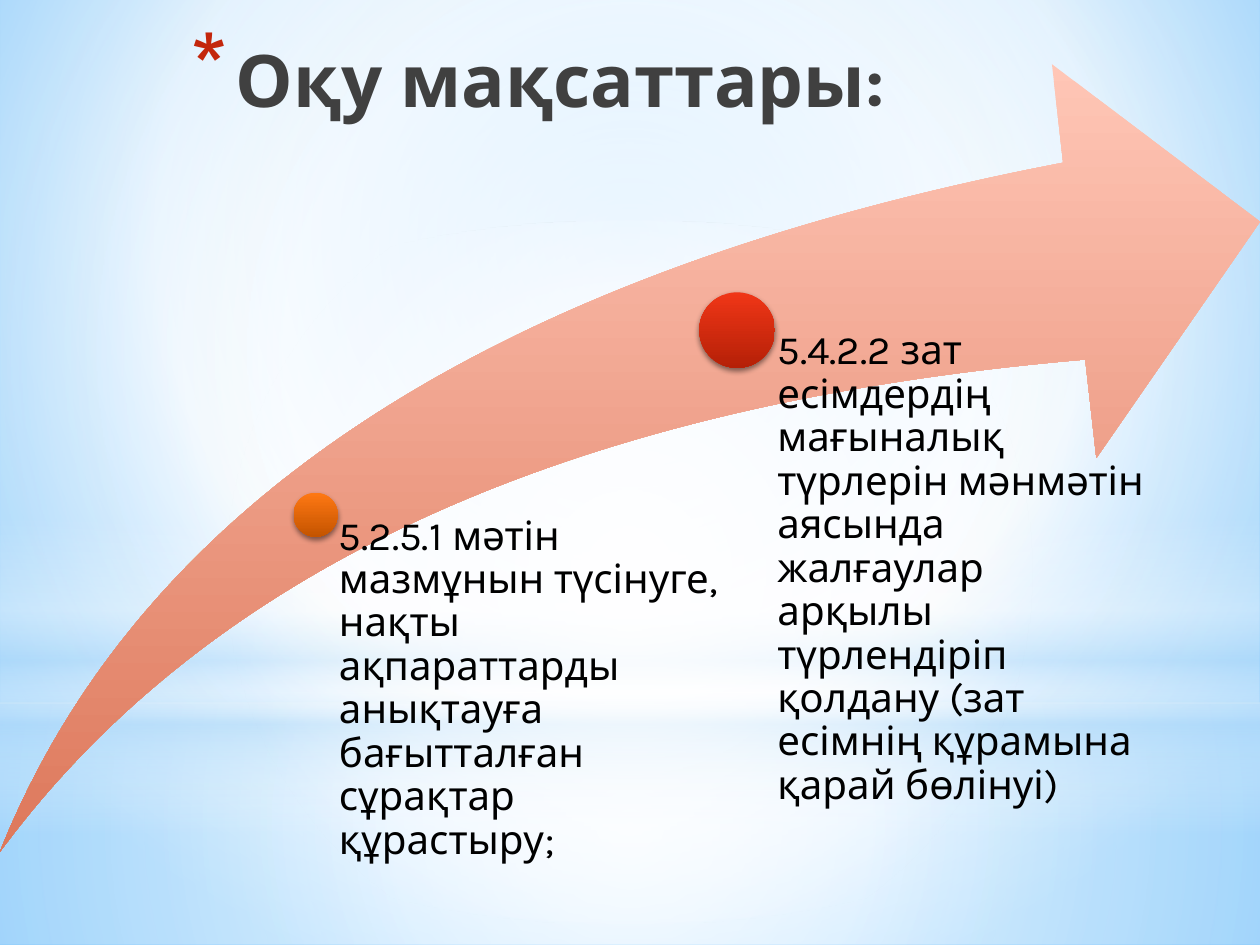
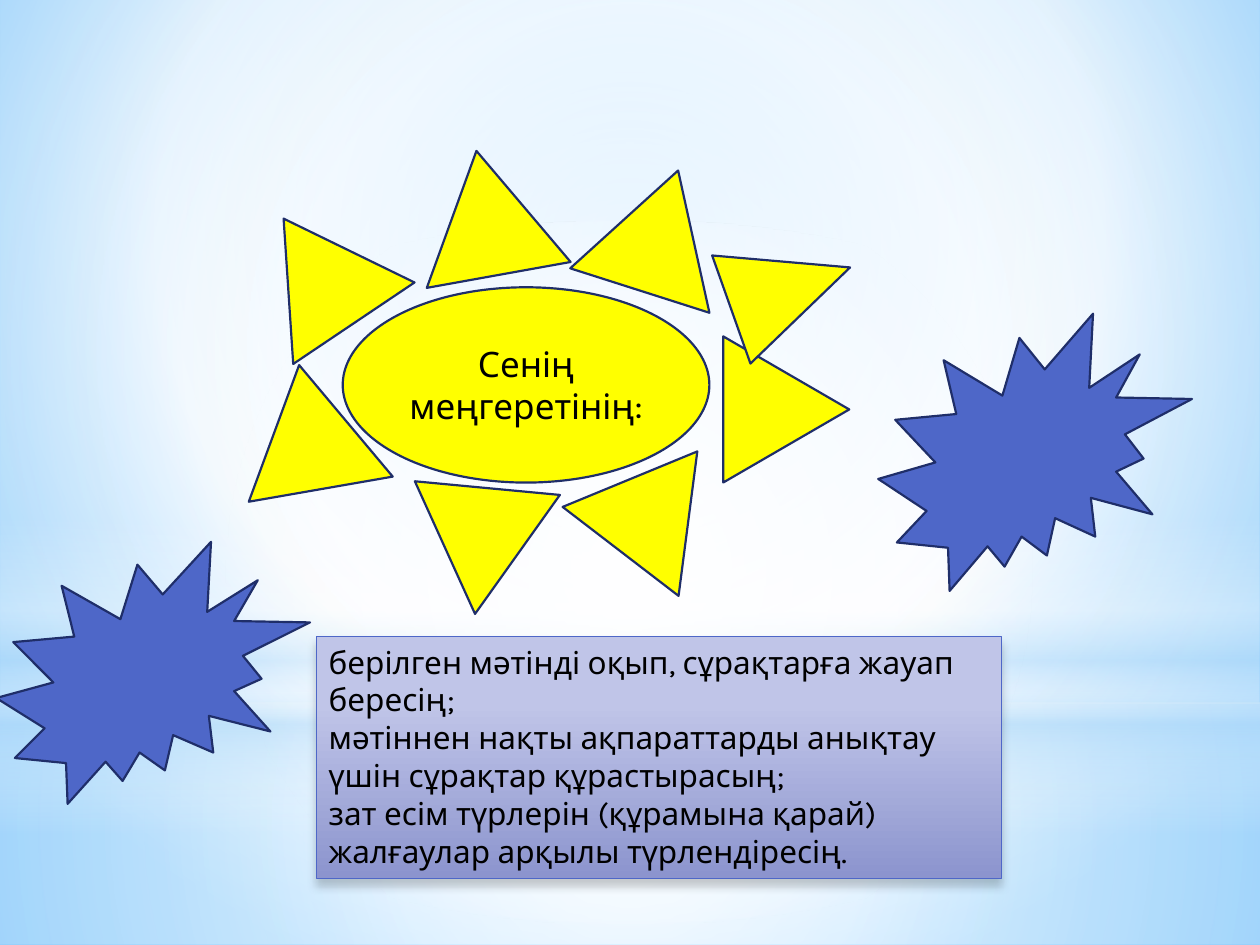
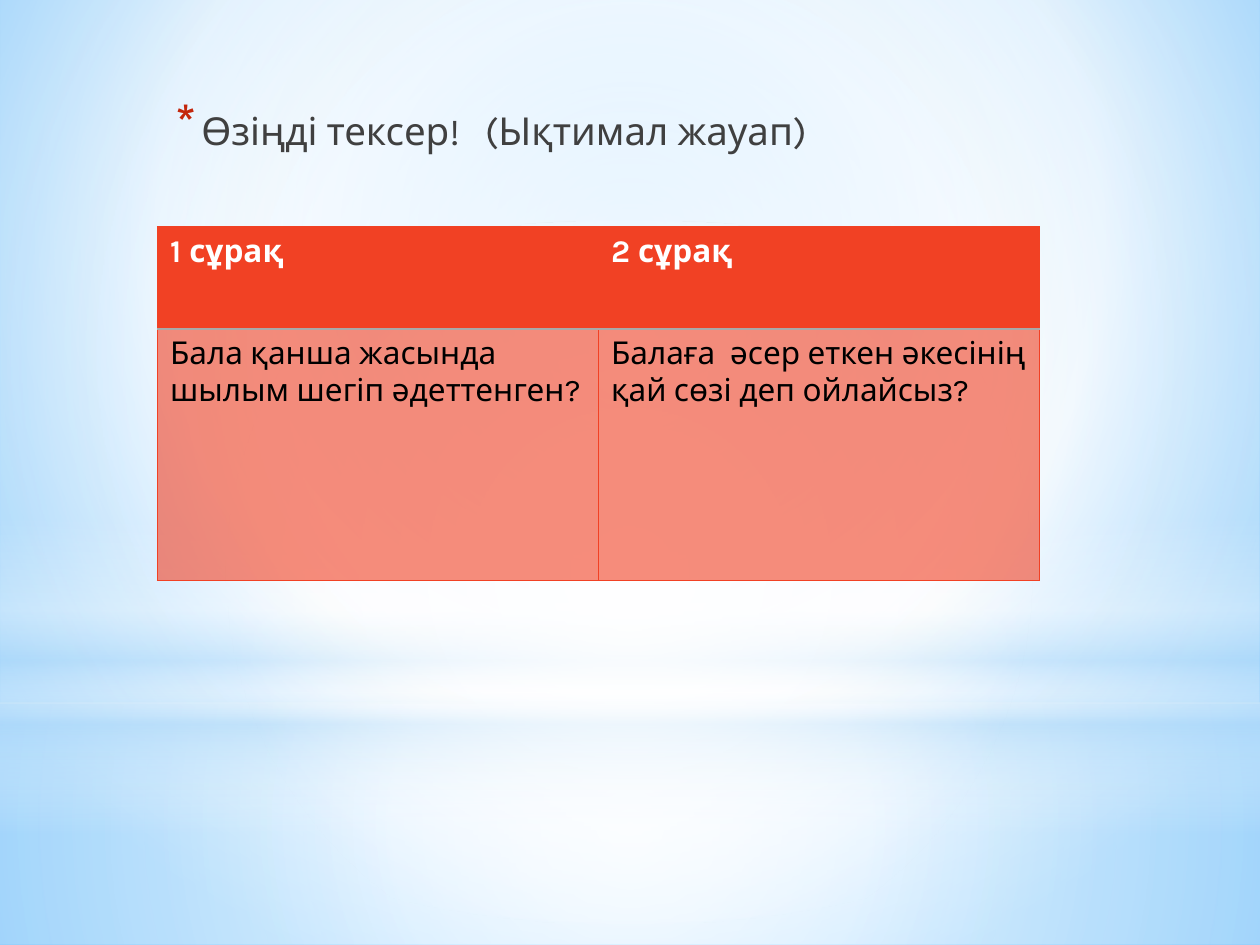
import pptx
import pptx.dml.color
import pptx.enum.shapes
import pptx.enum.text
import pptx.oxml
import pptx.oxml.ns
import pptx.util

Inches = pptx.util.Inches
Pt = pptx.util.Pt
color = pptx.dml.color.RGBColor.from_string
SHAPE = pptx.enum.shapes.MSO_SHAPE
ALIGN = pptx.enum.text.PP_ALIGN
ANCHOR = pptx.enum.text.MSO_ANCHOR
NAMESPACE = pptx.oxml.ns.nsdecls("a")

# Shared colours and font
FONT = "Karla"
BLACK, WHITE, TITLE_GREY = "000000", "FFFFFF", "404040"
BULLET_RED, TABLE_RED, RULE_GREY = "C3260C", "F14124", "A9A9A9"
YELLOW, BLUE, NAVY, SKY = "FFFF00", "4E67C8", "1F2E69", "B4DCFA"
CENTRE = (50, 50, 50, 50)


def paint_gradient(fill, parent, stops, focus=None):
    """Fill with (position, colour, opacity) stops, downward or around a focus."""
    stop_xml = "".join(
        f'<a:gs pos="{position * 1000}"><a:srgbClr val="{value}">'
        f'<a:alpha val="{opacity * 1000}"/></a:srgbClr></a:gs>'
        for position, value, opacity in stops)
    if focus:
        left, top, right, bottom = (edge * 1000 for edge in focus)
        direction = (f'<a:path path="circle"><a:fillToRect l="{left}" t="{top}" '
                     f'r="{right}" b="{bottom}"/></a:path>')
    else:
        direction = '<a:lin ang="5400000" scaled="0"/>'
    fill.background()
    parent.replace(parent.find(pptx.oxml.ns.qn("a:noFill")), pptx.oxml.parse_xml(
        f'<a:gradFill {NAMESPACE} rotWithShape="1"><a:gsLst>{stop_xml}</a:gsLst>'
        f'{direction}</a:gradFill>'))


def add_item(slide, kind, box, fill=None, line=None, focus=None, shadow=None,
             lines=(), size=18, text_color=BLACK, bold=False, align=ALIGN.LEFT,
             anchor=ANCHOR.TOP, spacing=None, margins=None, bullet=None):
    """Add a preset shape, or a text box when kind is None."""
    box = [Inches(length) for length in box]
    if kind is None:
        shape = slide.shapes.add_textbox(*box)
    else:
        shape = slide.shapes.add_shape(kind, *box)
        shape.shadow.inherit = False
        if isinstance(fill, str):
            shape.fill.solid()
            shape.fill.fore_color.rgb = color(fill)
        else:
            paint_gradient(shape.fill, shape.element.spPr, fill, focus)
        if line:
            shape.line.color.rgb = color(line[0])
            shape.line.width = Pt(line[1])
        else:
            shape.line.fill.background()
    if shadow:
        opacity, blur, distance = shadow
        effects = shape.element.spPr.find(pptx.oxml.ns.qn("a:effectLst"))
        effects.append(pptx.oxml.parse_xml(
            f'<a:outerShdw {NAMESPACE} blurRad="{Pt(blur)}" dist="{Pt(distance)}" '
            f'dir="5400000" rotWithShape="0"><a:srgbClr val="{BLACK}">'
            f'<a:alpha val="{opacity * 1000}"/></a:srgbClr></a:outerShdw>'))
    frame = shape.text_frame
    if lines:
        frame.word_wrap = True
        frame.vertical_anchor = anchor
        frame.text = "\n".join(lines)
    if margins:
        for side, margin in zip(("left", "top", "right", "bottom"), margins):
            setattr(frame, f"margin_{side}", Inches(margin))
    for paragraph in frame.paragraphs if lines else ():
        paragraph.alignment = align
        paragraph.line_spacing = spacing
        if bullet:
            left, indent, percent = bullet
            properties = paragraph._p.get_or_add_pPr()
            properties.set("marL", str(Inches(left)))
            properties.set("indent", str(Inches(indent)))
            for tag in (f'buClr {NAMESPACE}><a:srgbClr val="{BULLET_RED}"/></a:buClr',
                        f'buSzPct {NAMESPACE} val="{percent * 1000}"/',
                        f'buChar {NAMESPACE} char="*"/'):
                properties.append(pptx.oxml.parse_xml(f"<a:{tag}>"))
        for run in paragraph.runs:
            for name, value in dict(name=FONT, size=Pt(size), bold=bold).items():
                setattr(run.font, name, value)
            run.font.color.rgb = color(text_color)
    return shape


presentation = pptx.Presentation()
presentation.slide_width = Inches(10)
presentation.slide_height = Inches(7.5)

# Sky background shared by all slides
BACKGROUND = [(0, "9ED5FF", 100), (60, WHITE, 100), (100, "5BB9FF", 100)]
SKY_LAYERS = [
    (SHAPE.RECTANGLE, (0, 5.58, 10, 1.92),
     [(0, WHITE, 91), (37, WHITE, 76), (100, SKY, 79)], CENTRE),
    (SHAPE.RECTANGLE, (0, 0, 10, 5.58),
     [(0, WHITE, 89), (48, WHITE, 62), (100, SKY, 79)], CENTRE),
    (SHAPE.RECTANGLE, (0, 4.12, 10, 2.5),
     [(0, WHITE, 0), (29, WHITE, 30), (45, SKY, 40), (55, WHITE, 26),
      (65, SKY, 60), (100, WHITE, 0)], None),
    (SHAPE.OVAL, (0, 1.75, 10, 5.58), [(0, WHITE, 100), (56, WHITE, 0)], CENTRE),
]
slides = []
for number in range(3):
    slide = presentation.slides.add_slide(presentation.slide_layouts[6])
    background_fill = slide.background.fill
    background_fill.background()
    paint_gradient(background_fill, slide.element.cSld.bg.bgPr, BACKGROUND,
                   (20, 10, 20, 60))
    for kind, box, stops, focus in SKY_LAYERS:
        add_item(slide, kind, box, stops, focus=focus)
    slides.append(slide)
goals_slide, sun_slide, check_slide = slides

# Slide 1: learning goals along a rising arrow
arrow = add_item(goals_slide, SHAPE.SWOOSH_ARROW, (0, 0.51, 10, 6.25),
                 [(0, "FFC6B6", 100), (100, "DD785B", 100)])
for index in range(2):
    arrow.adjustments[index] = 0.25
goals = [
    ((2.33, 3.91, 0.35, 0.35), ("FF7813", "C45400"), (2.5, 4.09, 3.25, 2.67), 0.19,
     "5.2.5.1 мәтін мазмұнын түсінуге, нақты ақпараттарды анықтауға бағытталған "
     "сұрақтар құрастыру;"),
    ((5.55, 2.32, 0.6, 0.6), ("F03617", "B52007"), (5.85, 2.62, 3.25, 4.14), 0.32,
     "5.4.2.2 зат есімдердің мағыналық түрлерін мәнмәтін аясында жалғаулар арқылы "
     "түрлендіріп қолдану (зат есімнің құрамына қарай бөлінуі)"),
]
for ball_box, (light, dark), text_box, inset, goal in goals:
    add_item(goals_slide, SHAPE.OVAL, ball_box, [(0, light, 100), (100, dark, 100)],
             shadow=(45, 3.1, 1.8))
    add_item(goals_slide, None, text_box, lines=[goal], size=23, spacing=0.9,
             margins=(inset, 0, 0, 0))
add_item(goals_slide, None, (0, 0.23, 7.12, 1.25), lines=["Оқу мақсаттары:"],
         size=41.4, text_color=TITLE_GREY, bold=True, align=ALIGN.RIGHT,
         bullet=(0.35, -0.35, 128))

# Slide 2: sun with rays, bursts and the skills box
OUTLINE = (NAVY, 1.25)
add_item(sun_slide, SHAPE.OVAL, (2.72, 2.28, 2.91, 1.55), YELLOW, OUTLINE,
         lines=["Сенің меңгеретінің:"], size=20, align=ALIGN.CENTER,
         anchor=ANCHOR.MIDDLE)
rays = [(3.29, 1.19, 1.16, 349.8), (3.12, 3.61, 1.16, 305.5), (1.88, 2.89, 1.16, 350.1),
        (1.95, 1.65, 1.16, 326.1), (4.65, 1.33, 1.16, 17.7), (5.66, 2.75, 1.16, 90),
        (4.65, 3.48, 1.16, 37.5), (5.82, 1.79, 0.91, 70.5)]
for left, top, width, rotation in rays:
    ray = add_item(sun_slide, SHAPE.ISOSCELES_TRIANGLE, (left, top, width, 1),
                   YELLOW, OUTLINE)
    ray.rotation = rotation
for burst_box in ((6.97, 2.49, 2.49, 2.2), (-0.03, 4.3, 2.49, 2.08)):
    add_item(sun_slide, SHAPE.EXPLOSION2, burst_box, BLUE, OUTLINE)
add_item(sun_slide, SHAPE.RECTANGLE, (2.51, 5.05, 5.44, 1.92),
         [(28, "C0C5E8", 100), (100, "8C94CE", 100)], (BLUE, 0.75), shadow=(20, 5, 4),
         lines=["берілген мәтінді оқып, сұрақтарға жауап бересің;",
                "мәтіннен нақты ақпараттарды анықтау үшін сұрақтар құрастырасың;",
                "зат есім түрлерін (құрамына қарай) жалғаулар арқылы түрлендіресің."])

# Slide 3: self-check heading and question table
add_item(check_slide, None, (1.25, 0.8, 7, 0.6),
         lines=["Өзіңді тексер!\t(Ықтимал жауап)"], size=22, text_color=TITLE_GREY,
         bullet=(0.25, -0.2, 130))
questions = [("1 сұрақ", "2 сұрақ"),
             ("Бала қанша жасында шылым шегіп әдеттенген?",
              "Балаға  әсер еткен әкесінің қай сөзі деп ойлайсыз?")]
table = check_slide.shapes.add_table(2, 2, Inches(1.25), Inches(1.8), Inches(7),
                                     Inches(2.81)).table
for row, height in zip(table.rows, (0.81, 2)):
    row.height = Inches(height)
for row_index, texts in enumerate(questions):
    header = row_index == 0
    for column_index, text in enumerate(texts):
        cell = table.cell(row_index, column_index)
        cell.text = text
        cell.fill.solid()
        cell.fill.fore_color.rgb = color(TABLE_RED)
        properties = cell._tc.get_or_add_tcPr()
        if not header:
            properties.find(".//" + pptx.oxml.ns.qn("a:srgbClr")).append(
                pptx.oxml.parse_xml(f'<a:alpha {NAMESPACE} val="60000"/>'))
        middle_side = "B" if header else "T"
        for position, side in enumerate("LRTB"):
            value, width = (RULE_GREY, 1.25) if side == middle_side else (TABLE_RED, 0.75)
            properties.insert(position, pptx.oxml.parse_xml(
                f'<a:ln{side} {NAMESPACE} w="{Pt(width)}"><a:solidFill>'
                f'<a:srgbClr val="{value}"/></a:solidFill></a:ln{side}>'))
        font = cell.text_frame.paragraphs[0].runs[0].font
        for name, value in dict(name=FONT, size=Pt(18), bold=header).items():
            setattr(font, name, value)
        font.color.rgb = color(WHITE if header else BLACK)

presentation.save("out.pptx")
